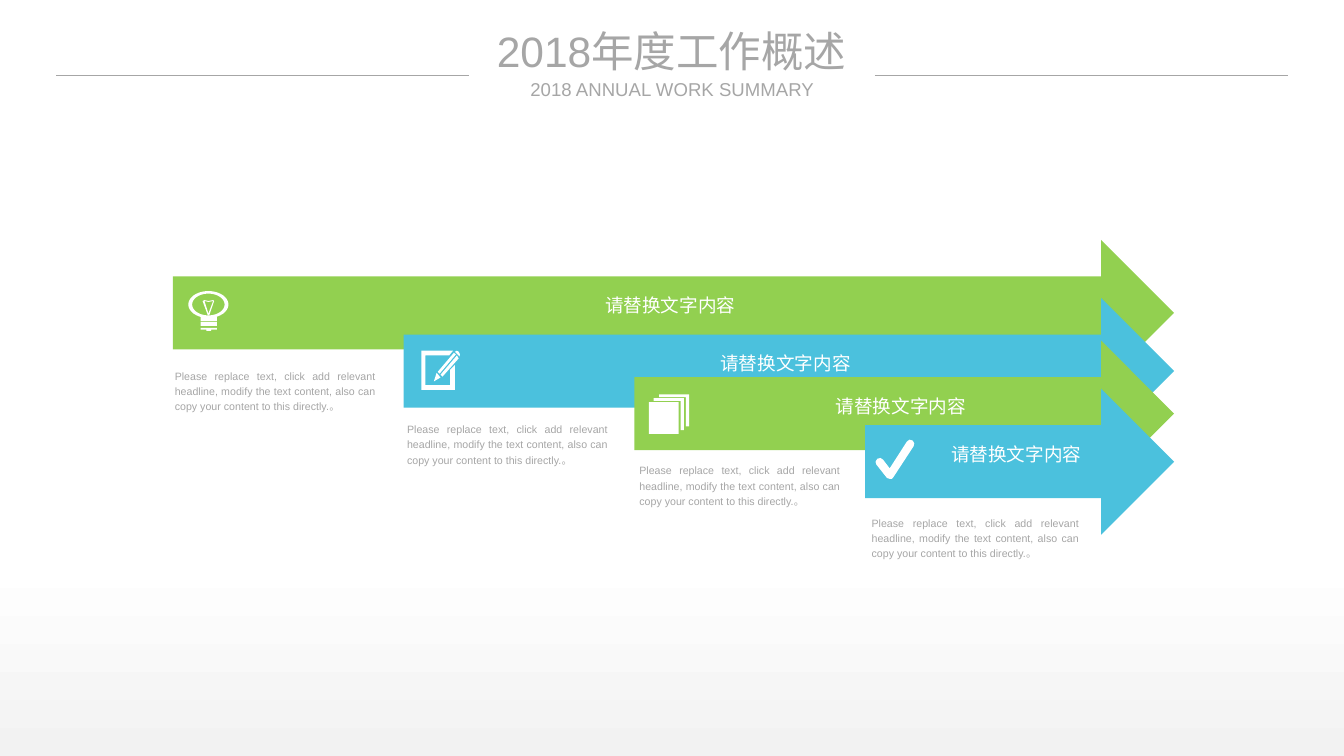
from math import cos, pi, sin

from lxml.etree import SubElement
from pptx import Presentation
from pptx.dml.color import RGBColor
from pptx.enum.shapes import MSO_CONNECTOR, MSO_SHAPE
from pptx.enum.text import MSO_ANCHOR, MSO_AUTO_SIZE, PP_ALIGN
from pptx.oxml.ns import qn
from pptx.util import Pt

GREEN = RGBColor(0x92, 0xD0, 0x50)
BLUE = RGBColor(0x4B, 0xC1, 0xDD)
GREY = RGBColor(0xA6, 0xA6, 0xA6)
PALE = RGBColor(0xF2, 0xF2, 0xF2)
WHITE = RGBColor(0xFF, 0xFF, 0xFF)

LABEL = "请替换文字内容"
NOTE = ("Please replace text, click add relevant headline, modify the text "
        "content, also can copy your content to this directly.。")


class Sheet:
    """Holds the style and the current slide; lengths are in points."""

    font = "Arial"

    def __init__(self, deck):
        self.slide = deck.slides.add_slide(deck.slide_layouts[5])
        self.home = self.slide.shapes

    def group(self):
        """Send the next shapes into a new group."""
        self.home = self.slide.shapes.add_group_shape().shapes

    def backdrop(self, low, high, end):
        fill = self.slide.background.fill
        fill.gradient()
        fill.gradient_angle = 90
        for stop, color, place in zip(fill.gradient_stops, (low, high), (0, end)):
            stop.color.rgb = color
            stop.position = place

    def label(self, shape, text, size, color, align=PP_ALIGN.CENTER,
              space=None, inset=(0, 0, 0, 0), anchor=MSO_ANCHOR.MIDDLE):
        frame = shape.text_frame
        frame.word_wrap = True
        frame.auto_size = MSO_AUTO_SIZE.NONE
        frame.vertical_anchor = anchor
        (frame.margin_left, frame.margin_top,
         frame.margin_right, frame.margin_bottom) = map(Pt, inset)
        frame.text = text
        para = frame.paragraphs[0]
        para.alignment = align
        para.line_spacing = space
        para.font.name = self.font
        para.font.size = Pt(size)
        para.font.color.rgb = color

    def title(self, text, box, size):
        shape = self.slide.shapes.title
        shape.left, shape.top, shape.width, shape.height = map(Pt, box)
        self.label(shape, text, size, GREY)

    def text(self, text, box, size, **style):
        self.label(self.home.add_textbox(*map(Pt, box)), text, size, GREY, **style)

    def paint(self, shape, color):
        shape.shadow.inherit = False
        shape.fill.solid()
        shape.fill.fore_color.rgb = color
        shape.line.fill.background()
        return shape

    def rect(self, box, color=WHITE):
        shape = self.home.add_shape(MSO_SHAPE.RECTANGLE, *map(Pt, box))
        return self.paint(shape, color)

    def free(self, *loops, color=WHITE):
        """Draw one filled outline; further loops cut holes."""
        loops = [[(Pt(x), Pt(y)) for x, y in loop] for loop in loops]
        pen = self.home.build_freeform(*loops[0][0])
        pen.add_line_segments(loops[0][1:])
        for loop in loops[1:]:
            pen.move_to(*loop[0])
            pen.add_line_segments(loop[1:])
        return self.paint(pen.convert_to_shape(), color)

    def arrow(self, left, top, color):
        neck, tip, high, low, end = 829.5, 884.5, top + 27.5, top + 82.5, top + 110
        shape = self.free([(left, high), (neck, high), (neck, top),
                           (tip, top + 55), (neck, end), (neck, low),
                           (left, low)], color=color)
        self.label(shape, LABEL, 14, WHITE, space=1.2,
                   inset=(42.5, 29.5, 47.5, 44.6))

    def rule(self, left, right, y):
        line = self.home.add_connector(MSO_CONNECTOR.STRAIGHT, Pt(left), Pt(y),
                                       Pt(right), Pt(y))
        line.line.color.rgb = GREY
        line.line.width = Pt(1)
        SubElement(line._element.spPr, qn("a:effectLst"))


def oval(x, y, wide, high, turn=1, count=60):
    steps = [turn * 2 * pi * i / count for i in range(count)]
    return [(x + wide * cos(a), y + high * sin(a)) for a in steps]


def bulb(sheet):
    sheet.group()
    sheet.free(oval(157, 229.4, 15.1, 10.1), oval(157, 229.4, 12.2, 8.2, -1))
    sheet.rect((151.2, 238.3, 12.2, 3.6))
    sheet.rect((151.2, 242.6, 12.2, 2.9))
    sheet.free([(151.2, 247), (163.4, 247), (163.4, 248.4), (159.1, 248.4),
                (159.1, 249.3), (155.5, 249.3), (155.5, 248.4), (151.2, 248.4)])
    sheet.free([(161.3, 226.8), (160.6, 226.1), (157, 226.8), (154.1, 226.1),
                (152.6, 226.8), (156.6, 237.6), (157.7, 237.6)],
               [(157, 236.2), (154.1, 226.8), (157, 227.5), (160.6, 226.8)])


def pencil(sheet):
    sheet.group()
    tip = [(331.9, 284.4), (329, 280.8), (326.9, 287.3)]
    upper = [(342, 265.7), (329.8, 280.1), (331.2, 281.5), (343.4, 267.1)]
    lower = [(331.9, 282.2), (333.4, 283.7), (345.6, 270), (344.2, 267.8)]
    rubber = [(342.7, 265), (344.2, 264.2), (345.6, 265), (346.5, 266.8),
              (346.3, 268.6)]
    pad = [(339.1, 290.2), (320.4, 290.2), (320.4, 267.8), (338.4, 267.8),
           (341.3, 264.2), (317.5, 264.2), (317.5, 293.8), (342.7, 293.8),
           (342.7, 275), (339.1, 278.6)]
    for part in (tip, upper, lower, rubber, pad):
        sheet.free(part)


def pages(sheet):
    sheet.group()
    for x, y in ((492.5, 300), (496.5, 297.1)):
        edge = [(0, 0), (22.7, 0), (22.7, 24), (20.2, 24), (20.2, 2), (0, 2)]
        sheet.free([(x + a, y + b) for a, b in edge])
    sheet.rect((488.9, 303, 22.4, 23.9))


def tick(sheet):
    sheet.free([(670.3, 360.7), (668.2, 360), (660.2, 349.9), (659.6, 347.8),
                (661, 345.6), (663.4, 345), (665.3, 346.3), (670.3, 352.8),
                (683.3, 332.6), (685.2, 331.2), (687.6, 331.9), (688.8, 333.9),
                (688.3, 336.2), (673.2, 359.3), (672, 360.7)])


def main():
    deck = Presentation()
    deck.slide_width, deck.slide_height = Pt(1012.5), Pt(569.5)
    sheet = Sheet(deck)
    sheet.backdrop(PALE, WHITE, 0.26)

    # Heading
    sheet.title("2018年度工作概述", (350.6, 18.7, 311, 38.9), 32)
    sheet.text("2018 ANNUAL WORK SUMMARY", (396, 58.3, 221, 17.3), 14)
    for left in (42.5, 659):
        sheet.rule(left, left + 311, 57)

    # Notes below the arrows
    for i, top in enumerate((272.9, 313.2, 344.2, 383.8)):
        wide = 170.6 if i == 3 else 165.6
        sheet.text(NOTE, (124.6 + 175 * i, top, wide, 41.8), 8,
                   align=PP_ALIGN.JUSTIFY, space=1.2,
                   inset=(7.2, 3.6, 7.2, 3.6), anchor=MSO_ANCHOR.TOP)

    # Arrows, each starting one step further right
    for i, top in enumerate((180.7, 224.5, 256.5, 292.8)):
        sheet.arrow(130.3 + 173.8 * i, top, (GREEN, BLUE)[i % 2])

    # Icons
    tick(sheet)
    for icon in (pages, bulb, pencil):
        icon(sheet)

    deck.save("out.pptx")


if __name__ == "__main__":
    main()
